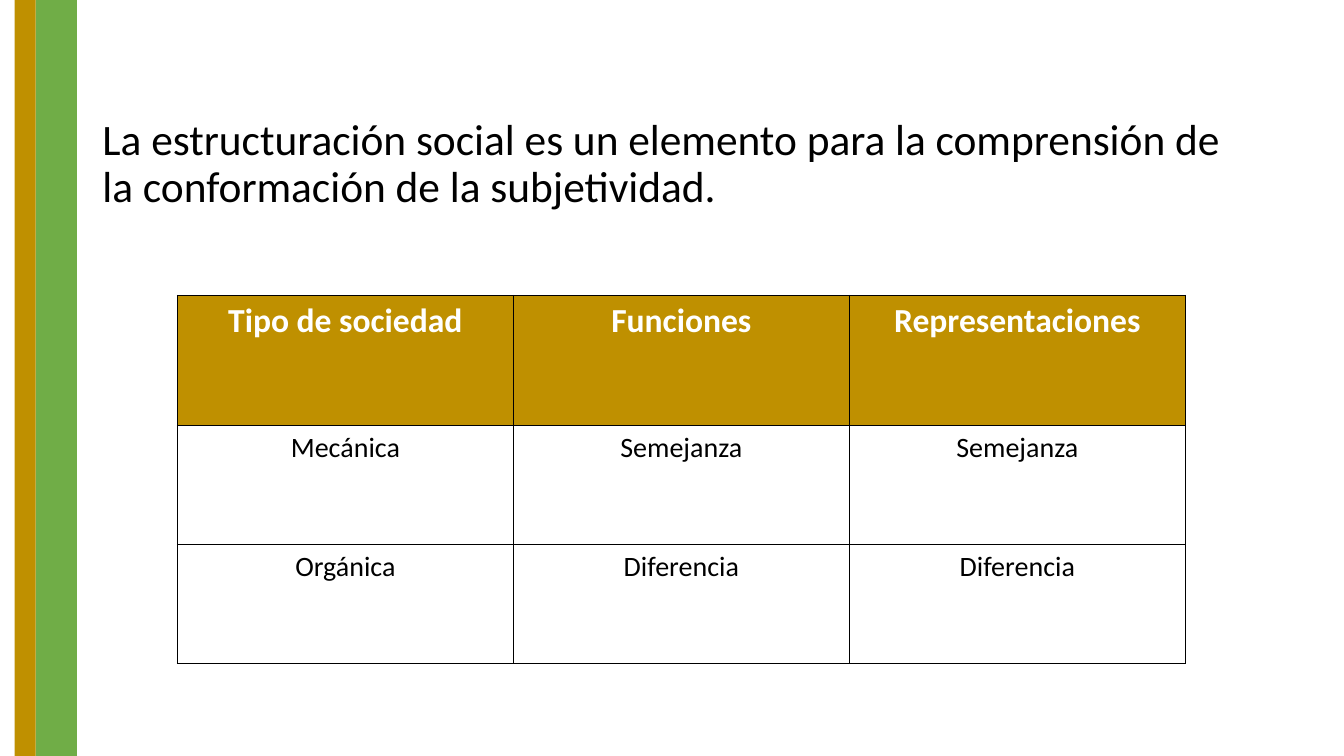
from lxml.etree import SubElement
from pptx import Presentation
from pptx.dml.color import RGBColor
from pptx.enum.shapes import MSO_SHAPE as Preset
from pptx.enum.text import MSO_ANCHOR as Anchor, MSO_AUTO_SIZE as AutoSize, PP_ALIGN as Align
from pptx.oxml.ns import qn
from pptx.util import Pt

COLORS = {"gold": "BF9000", "green": "70AD47", "white": "FFFFFF", "black": "000000"}
FONT = "Calibri"
TITLE = "La estructuración social es un elemento para la comprensión de la conformación de la subjetividad."
ROWS = [
    ("Tipo de sociedad", "Funciones", "Representaciones"),
    ("Mecánica", "Semejanza", "Semejanza"),
    ("Orgánica", "Diferencia", "Diferencia"),
]
ROW_HEIGHTS = (93, 85, 85)
TABLE_WIDTH = 720


def set_values(target, values):
    for name, value in values.items():
        setattr(target, name, value)


def format_text(paragraph, size, color, bold=False, **layout):
    set_values(paragraph, layout)
    set_values(paragraph.font, {"name": FONT, "size": Pt(size), "bold": bold})
    paragraph.font.color.rgb = RGBColor.from_string(COLORS[color])


def set_fill(target, color):
    target.fill.solid()
    target.fill.fore_color.rgb = RGBColor.from_string(COLORS[color])


def place_title(slide):
    title = slide.shapes.title
    set_values(title, {"left": Pt(66), "top": Pt(24.5), "width": Pt(828), "height": Pt(173)})
    frame = title.text_frame
    frame.text = TITLE
    set_values(frame, {
        "word_wrap": True, "auto_size": AutoSize.NONE,
        "vertical_anchor": Anchor.MIDDLE, "margin_top": Pt(17),
    })
    format_text(frame.paragraphs[0], 31, "black", alignment=Align.LEFT, line_spacing=0.9)


def add_stripe(slide, left, width, height, color):
    stripe = slide.shapes.add_shape(Preset.RECTANGLE, Pt(left), 0, Pt(width), height)
    stripe.shadow.inherit = False
    stripe.line.fill.background()
    set_fill(stripe, color)


def add_borders(cell, color, width):
    """Draw all four sides; borders must precede the fill in the cell XML."""
    properties = cell._tc.get_or_add_tcPr()
    for position, side in enumerate(("lnL", "lnR", "lnT", "lnB")):
        line = SubElement(properties, qn(f"a:{side}"), w=str(Pt(width)))
        fill = SubElement(line, qn("a:solidFill"))
        SubElement(fill, qn("a:srgbClr"), val=COLORS[color])
        properties.insert(position, line)


def add_society_table(slide):
    frame = slide.shapes.add_table(
        len(ROWS), len(ROWS[0]), Pt(126.75), Pt(211), Pt(TABLE_WIDTH), Pt(sum(ROW_HEIGHTS)))
    table = frame.table
    table.horz_banding = False
    for row, height in zip(table.rows, ROW_HEIGHTS):
        row.height = Pt(height)
    for row_index, texts in enumerate(ROWS):
        is_header = row_index == 0
        for column_index, text in enumerate(texts):
            cell = table.cell(row_index, column_index)
            cell.text = text
            set_fill(cell, "gold" if is_header else "white")
            add_borders(cell, "black", 1)
            format_text(
                cell.text_frame.paragraphs[0], 24 if is_header else 20,
                "white" if is_header else "black", is_header, alignment=Align.CENTER)


def main():
    presentation = Presentation()
    set_values(presentation, {"slide_width": Pt(960), "slide_height": Pt(540)})
    slide = presentation.slides.add_slide(presentation.slide_layouts[5])
    place_title(slide)
    add_stripe(slide, 25.5, 29.5, presentation.slide_height, "green")
    add_stripe(slide, 10.5, 15, presentation.slide_height, "gold")
    add_society_table(slide)
    presentation.save("out.pptx")


if __name__ == "__main__":
    main()
